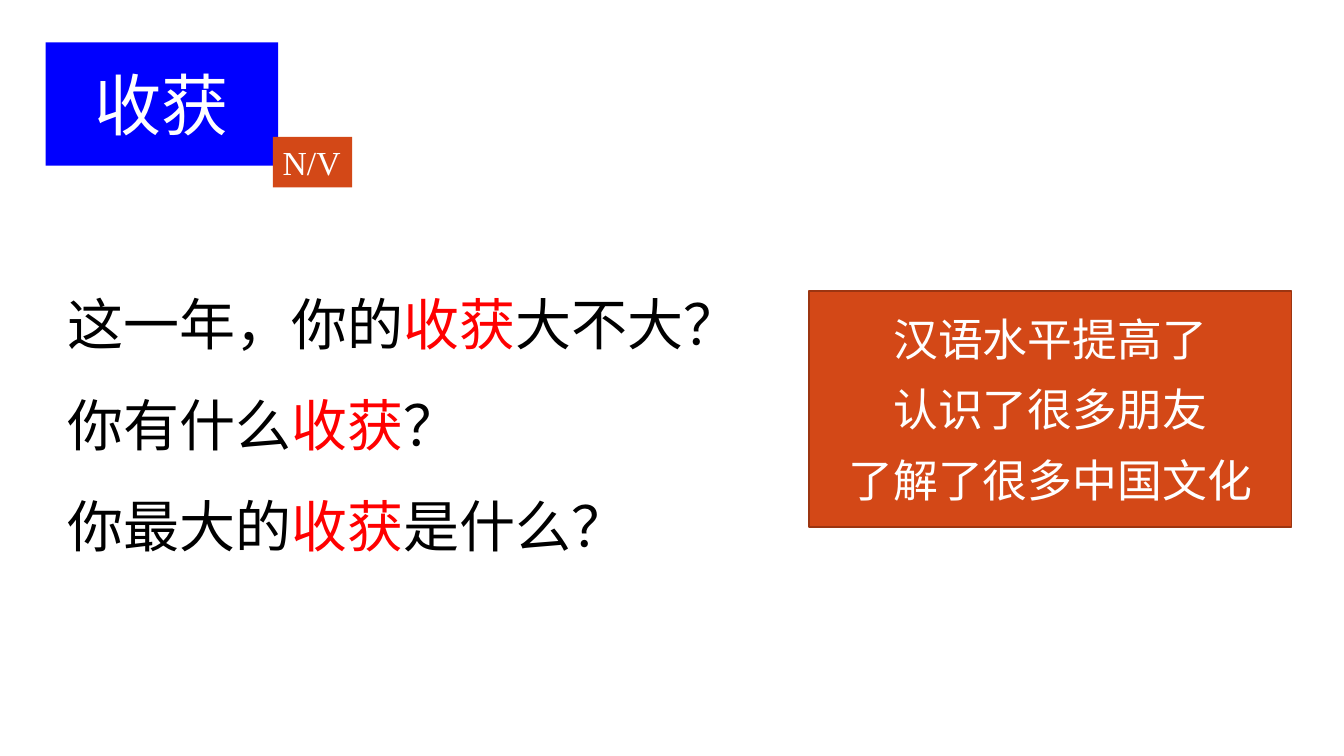
from dataclasses import dataclass

from pptx import Presentation
from pptx import util as u
from pptx.dml.color import RGBColor
from pptx.enum import shapes, text
from pptx.oxml import parse_xml
from pptx.oxml.ns import nsdecls, qn


@dataclass(frozen=True)
class Theme:
    """Colours, fonts and type sizes of the lesson."""
    white: str = "FFFFFF"
    black: str = "000000"
    red: str = "FF0000"
    blue: str = "0000FF"
    orange: str = "D34817"
    rust: str = "9C3511"
    latin: str = "Times New Roman"
    chinese: str = "Noto Sans CJK SC"
    word: int = 48
    question: int = 40
    answer: int = 32
    tag: int = 24


class WordSlide:
    """A vocabulary slide placed by shares of its width and height."""

    def __init__(self, deck, theme):
        """Add a title-only slide to the deck."""
        self.deck, self.theme = deck, theme
        self.page = deck.slides.add_slide(deck.slide_layouts[5])

    def area(self, left, top, width, height):
        """Turn shares of the slide into lengths."""
        across, down = self.deck.slide_width, self.deck.slide_height
        return (int(left * across), int(top * down),
                int(width * across), int(height * down))

    def style(self, para, size, color, font, align=None):
        """Set the font and alignment of a paragraph."""
        para.alignment = align
        para.font.size = u.Pt(size)
        para.font.name = font
        para.font.color.rgb = RGBColor.from_string(color)
        props = para._p.get_or_add_pPr().find(qn("a:defRPr"))
        props.find(qn("a:latin")).addnext(parse_xml(
            f'<a:ea {nsdecls("a")} typeface="{self.theme.chinese}"/>'))

    def word(self, wording, *shares):
        """Make the title an ellipse holding the new word."""
        title = self.page.shapes.title
        title.left, title.top, title.width, title.height = self.area(*shares)
        title._element.spPr.find(qn("a:xfrm")).addnext(parse_xml(
            f'<a:prstGeom {nsdecls("a")} prst="ellipse"><a:avLst/></a:prstGeom>'))
        title.fill.solid()
        title.fill.fore_color.rgb = RGBColor.from_string(self.theme.blue)
        frame = title.text_frame
        frame.text = wording
        frame.auto_size = text.MSO_AUTO_SIZE.NONE
        frame.vertical_anchor = text.MSO_ANCHOR.MIDDLE
        self.style(frame.paragraphs[0], self.theme.word, self.theme.white,
                   self.theme.chinese, text.PP_ALIGN.CENTER)

    def panel(self, lines, size, *shares, align, border=None, gap=0, wrap=True):
        """Add an orange rectangle with white lines of text."""
        box = self.page.shapes.add_shape(
            shapes.MSO_SHAPE.RECTANGLE, *self.area(*shares))
        box.shadow.inherit = False
        box.fill.solid()
        box.fill.fore_color.rgb = RGBColor.from_string(self.theme.orange)
        if border:
            box.line.color.rgb = RGBColor.from_string(border)
            box.line.width = u.Pt(1)
        else:
            box.line.fill.background()
        frame = box.text_frame
        frame.word_wrap = wrap
        frame.vertical_anchor = text.MSO_ANCHOR.MIDDLE
        frame.text = "\n".join(lines)
        for index, para in enumerate(frame.paragraphs):
            para.space_before = u.Pt(gap if index else 0)
            self.style(para, size, self.theme.white, self.theme.latin, align)

    def questions(self, lines, keyword, *shares):
        """Add questions with the keyword picked out in red."""
        box = self.page.shapes.add_textbox(*self.area(*shares))
        frame = box.text_frame
        frame.word_wrap = True
        for index, line in enumerate(lines):
            para = frame.add_paragraph() if index else frame.paragraphs[0]
            para.line_spacing = 1.5
            self.style(para, self.theme.question, self.theme.black, self.theme.latin)
            before, after = line.split(keyword)
            for wording in (before, keyword, after):
                span = para.add_run()
                span.text = wording
                if wording == keyword:
                    span.font.color.rgb = RGBColor.from_string(self.theme.red)


def main():
    """Build the slide for one word and save it."""
    deck = Presentation()
    deck.slide_width, deck.slide_height = u.Inches(13.33), u.Inches(7.5)
    theme = Theme()
    slide = WordSlide(deck, theme)
    keyword = "收获"
    slide.questions(
        ["这一年，你的收获大不大？", "你有什么收获？", "你最大的收获是什么？"],
        keyword, 0.043, 0.332, 0.881, 0.4)
    slide.word(keyword, 0.034, 0.056, 0.173, 0.163)
    slide.panel(
        ["汉语水平提高了", "认识了很多朋友", "了解了很多中国文化"],
        theme.answer, 0.602, 0.385, 0.359, 0.312,
        align=text.PP_ALIGN.CENTER, border=theme.rust, gap=12)
    slide.panel(["N/V"], theme.tag, 0.203, 0.181, 0.059, 0.067,
                align=text.PP_ALIGN.LEFT, wrap=False)
    deck.save("out.pptx")


if __name__ == "__main__":
    main()
